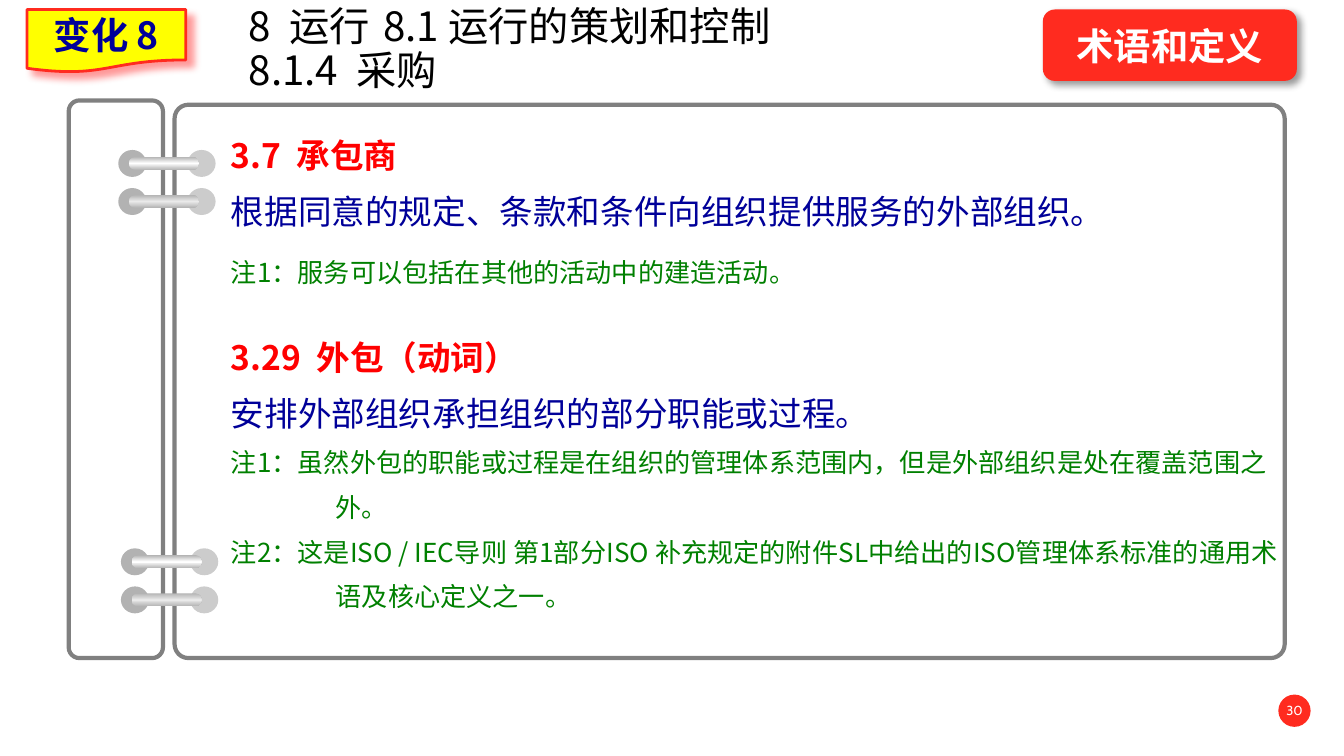
from copy import deepcopy
from lxml.etree import SubElement
from pptx import Presentation
from pptx.dml.color import RGBColor
from pptx.enum.shapes import MSO_SHAPE
from pptx.enum.text import MSO_ANCHOR, MSO_AUTO_SIZE, PP_ALIGN
from pptx.oxml.ns import qn
from pptx.util import Cm, Pt

COLORS = {
    "red": "FF2B1F", "term": "FF0000", "definition": "000099", "note": "008000",
    "border": "808080", "white": "FFFFFF", "black": "000000", "yellow": "FFFF00",
    "tube_edge": "B2B2B2", "tube_dull": "EAEAEA",
}
FONT = "Noto Sans CJK SC"

HEADING = "8  运行\t8.1 运行的策划和控制 \v8.1.4  采购"
CLAUSES = [
    ("term", "3.7  承包商", 30, 0, 0),
    ("definition", "根据同意的规定、条款和条件向组织提供服务的外部组织。", 30, 0, 0),
    ("note", "注1：服务可以包括在其他的活动中的建造活动。", 30, 0, 0),
    ("term", "3.29  外包（动词）", 30, 18, 0),
    ("definition", "安排外部组织承担组织的部分职能或过程。", 30, 0, 0),
    ("note", "注1：虽然外包的职能或过程是在组织的管理体系范围内，但是外部组织是处在覆盖范围之外。", 24, 0, 1.98),
    ("note", "注2：这是ISO / IEC导则 第1部分ISO 补充规定的附件SL中给出的ISO管理体系标准的通用术语及核心定义之一。", 24, 0, 1.98),
]
SIZES = {"term": 18, "definition": 18, "note": 14}
PAGES = [
    ((1.3, 1.9, 1.78, 10.54), 0.114, "white"),
    ((3.3, 1.98, 20.98, 10.46), 0.025, None),
]
BINDINGS = [(3.1, 3.09), (3.15, 10.62)]
RING_GAP = 0.72
LABELS = [
    (MSO_SHAPE.ROUNDED_RECTANGLE, (19.71, 0.18, 4.8, 1.35), "术语和定义", 20, FONT, "white", "red", None, ("black", 3)),
    (MSO_SHAPE.FLOWCHART_DOCUMENT, (0.51, 0.18, 3, 1.19), "变化 8", 20, FONT, "definition", "yellow", "red", ("term", 5)),
    (MSO_SHAPE.OVAL, (24.16, 13.13, 0.61, 0.61), "30", 7, "Cabin", "white", "red", None, None),
]


def rgb(name):
    return RGBColor.from_string(COLORS[name])


def add_outline(shapes, preset, box, fill=None, line=None, width=0):
    outline = shapes.add_shape(preset, *map(Cm, box))
    outline.shadow.inherit = False
    if fill:
        outline.fill.solid()
        outline.fill.fore_color.rgb = rgb(fill)
    else:
        outline.fill.background()
    if line:
        outline.line.color.rgb = rgb(line)
        outline.line.width = Pt(width)
    else:
        outline.line.fill.background()
    return outline


def style_text(paragraph, size, color, bold=False, font=FONT):
    for run in paragraph.runs:
        run.font.size, run.font.bold, run.font.name = Pt(size), bold, font
        run.font.color.rgb = rgb(color)
        SubElement(run.font._element, qn("a:ea")).set("typeface", font)


def clear_margins(frame):
    frame.margin_left = frame.margin_right = frame.margin_top = frame.margin_bottom = 0


def place(part, box):
    part.left, part.top, part.width, part.height = map(Cm, box)


def add_shadow(label, color, distance):
    effects = label._element.spPr.find(qn("a:effectLst"))
    shadow = SubElement(effects, qn("a:outerShdw"), blurRad=str(Pt(4)), dist=str(Pt(distance)),
                        dir="2700000", algn="tl", rotWithShape="0")
    tint = SubElement(shadow, qn("a:srgbClr"), val=COLORS[color])
    SubElement(tint, qn("a:alpha"), val="40000")


def add_upright(shapes, preset, x, y, width, height, fill=None):
    upright = add_outline(shapes, preset, (x - width / 2, y - height / 2, width, height), fill)
    upright.rotation = 90
    return upright


def add_ring(shapes, x, y, shine):
    for offset, alpha in ((0.71, 20), (-0.6, 30)):
        hole = add_upright(shapes, MSO_SHAPE.OVAL, x + offset, y, 0.51, 0.53, "black")
        tint = hole._element.spPr.find(qn("a:solidFill"))[0]
        SubElement(tint, qn("a:alpha"), val=str(alpha * 1000))
    tube = add_upright(shapes, MSO_SHAPE.ROUNDED_RECTANGLE, x, y, 0.25, 1.32)
    tube.adjustments[0] = 0.5
    tube.fill.gradient()
    tube.fill.gradient_angle = 0
    stops = tube._element.spPr.find(qn("a:gradFill")).find(qn("a:gsLst"))
    stops.append(deepcopy(stops[0]))
    for stop, position, color in zip(tube.fill.gradient_stops, (0, 0.5, 1), ("tube_edge", shine, "tube_edge")):
        stop.position = position
        stop.color.rgb = rgb(color)


def fill_clauses(frame):
    frame.word_wrap = True
    frame.auto_size = MSO_AUTO_SIZE.NONE
    frame.vertical_anchor = MSO_ANCHOR.TOP
    frame.text = "\n".join(clause[1] for clause in CLAUSES)
    for paragraph, (role, _, spacing, before, indent) in zip(frame.paragraphs, CLAUSES):
        paragraph.line_spacing, paragraph.space_before = Pt(spacing), Pt(before)
        properties = paragraph._p.get_or_add_pPr()
        properties.set("marL", str(Cm(indent)))
        properties.set("indent", str(-Cm(indent)))
        SubElement(properties, qn("a:buNone"))
        style_text(paragraph, SIZES[role], role, role == "term")


def main():
    deck = Presentation()
    deck.slide_width, deck.slide_height = Cm(25.4), Cm(14.29)
    slide = deck.slides.add_slide(deck.slide_layouts[1])
    heading, clauses = slide.placeholders

    place(heading, (4.7, 0.13, 16.99, 1.78))
    frame = heading.text_frame
    clear_margins(frame)
    frame.auto_size = MSO_AUTO_SIZE.NONE
    frame.vertical_anchor = MSO_ANCHOR.TOP
    title = frame.paragraphs[0]
    title.text = HEADING
    title.alignment = PP_ALIGN.LEFT
    title.line_spacing = 0.9
    style_text(title, 21.6, "black")

    place(clauses, (4.11, 2.13, 20.37, 9.65))
    fill_clauses(clauses.text_frame)

    for box, rounding, fill in PAGES:
        page = add_outline(slide.shapes, MSO_SHAPE.ROUNDED_RECTANGLE, box, fill, "border", 2.25)
        page.adjustments[0] = rounding

    for x, y in BINDINGS:
        binding = slide.shapes.add_group_shape()
        add_ring(binding.shapes, x, y + RING_GAP, "tube_dull")
        add_ring(binding.shapes, x, y, "white")

    for preset, box, text, size, font, color, fill, line, shadow in LABELS:
        label = add_outline(slide.shapes, preset, box, fill, line, 1.5)
        if shadow:
            add_shadow(label, *shadow)
        frame = label.text_frame
        clear_margins(frame)
        frame.vertical_anchor = MSO_ANCHOR.MIDDLE
        frame.text = text
        frame.paragraphs[0].alignment = PP_ALIGN.CENTER
        style_text(frame.paragraphs[0], size, color, font == FONT, font)

    deck.save("out.pptx")


if __name__ == "__main__":
    main()
